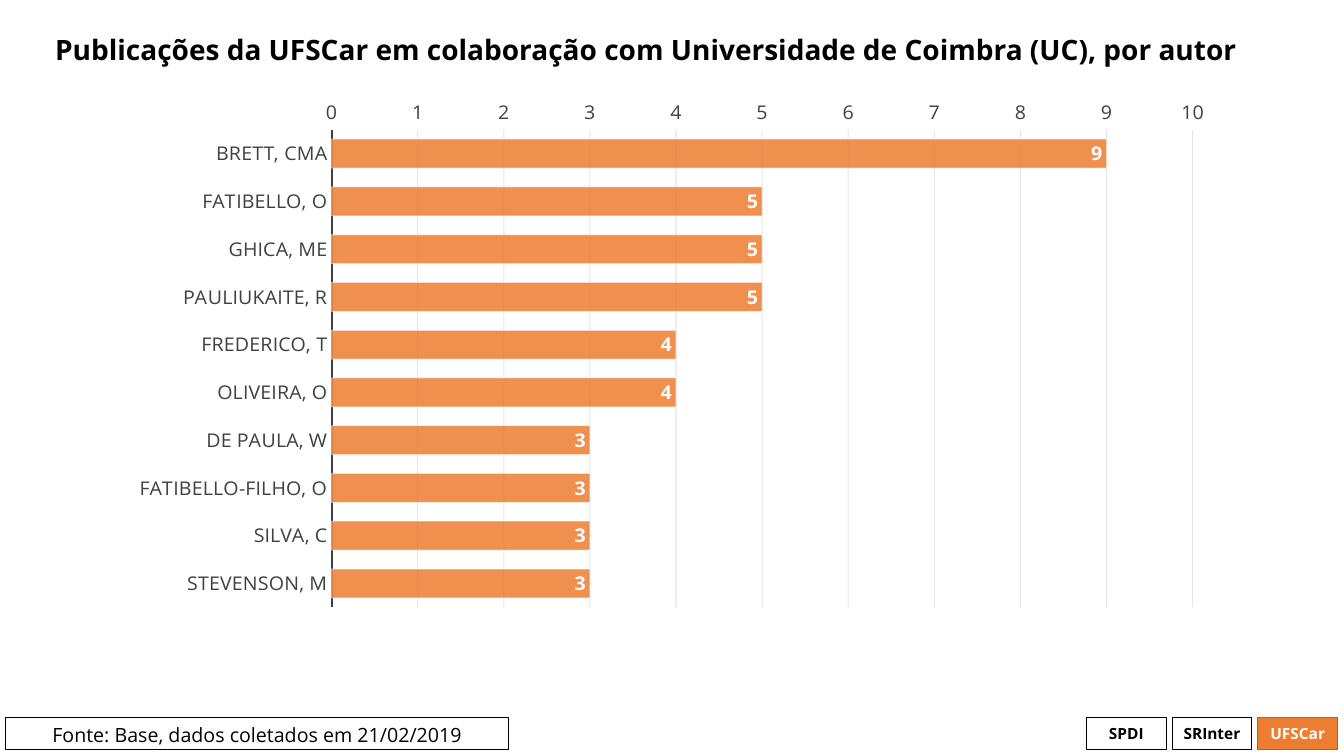
from lxml.etree import SubElement
from pptx import Presentation
from pptx.chart.data import CategoryChartData
from pptx.dml.color import RGBColor
from pptx.enum.chart import XL_AXIS_CROSSES, XL_CHART_TYPE, XL_LABEL_POSITION, XL_TICK_MARK
from pptx.enum.shapes import MSO_SHAPE
from pptx.enum.text import MSO_ANCHOR, PP_ALIGN
from pptx.oxml import parse_xml
from pptx.oxml.ns import nsdecls, qn
from pptx.util import Cm, Pt

TITLE = "Publicações da UFSCar em colaboração com Universidade de Coimbra (UC), por autor"
SOURCE = "Fonte: Base, dados coletados em 21/02/2019"
AUTHORS = [
    ("BRETT, CMA", 9),
    ("FATIBELLO, O", 5),
    ("GHICA, ME", 5),
    ("PAULIUKAITE, R", 5),
    ("FREDERICO, T", 4),
    ("OLIVEIRA, O", 4),
    ("DE PAULA, W", 3),
    ("FATIBELLO-FILHO, O", 3),
    ("SILVA, C", 3),
    ("STEVENSON, M", 3),
]
UNITS = [
    ("SPDI", None, "black", "black"),
    ("SRInter", None, "black", "black"),
    ("UFSCar", "orange", "rust", "white"),
]
THEME = {
    "font": "Open Sans",
    "black": "000000",
    "white": "FFFFFF",
    "gray": "404040",
    "grid": "0D0D0D",
    "orange": "ED7D31",
    "rust": "C55A11",
    "title": 20,
    "body": 14,
    "unit": 11,
}
PLOT_AREA = {"x": 0.194, "y": 0.022, "w": 0.776, "h": 0.89}
FOOT_TOP, FOOT_H = 18.08, 0.81
UNIT_LEFT, UNIT_W, UNIT_STEP = 27.38, 2.01, 2.16


def color(name):
    return RGBColor.from_string(THEME[name])


def apply(obj, values):
    for name, value in values.items():
        setattr(obj, name, value)


def style_font(font, size, ink, bold=False):
    apply(font, {"name": THEME["font"], "size": Pt(THEME[size]), "bold": bold})
    font.color.rgb = color(ink)


def style_line(line, ink, width=0.75):
    line.color.rgb = color(ink)
    line.width = Pt(width)


def write(sp, text, size, ink, bold, anchor, align):
    tf = sp.text_frame
    apply(tf, {"word_wrap": True, "vertical_anchor": anchor})
    p = tf.paragraphs[0]
    p.alignment = align
    r = p.add_run()
    r.text = text
    style_font(r.font, size, ink, bold)
    return p


def add_box(s, left, width, text, size, fill, border, ink, bold, anchor):
    sp = s.shapes.add_shape(MSO_SHAPE.RECTANGLE, Cm(left), Cm(FOOT_TOP), Cm(width), Cm(FOOT_H))
    sp.shadow.inherit = False
    if fill:
        sp.fill.solid()
        sp.fill.fore_color.rgb = color(fill)
    else:
        sp.fill.background()
    style_line(sp.line, border)
    write(sp, text, size, ink, bold, anchor, PP_ALIGN.CENTER)


def set_alpha(chart, path, percent):
    for clr in chart.element.xpath(path):
        SubElement(clr, qn("a:alpha")).set("val", str(percent * 1000))


def place_plot(chart):
    parts = "".join(f'<c:{k}Mode val="edge"/>' for k in "xy")
    parts += "".join(f'<c:{k} val="{v}"/>' for k, v in PLOT_AREA.items())
    layout = parse_xml(
        f'<c:layout {nsdecls("c")}><c:manualLayout><c:layoutTarget val="inner"/>'
        f"{parts}</c:manualLayout></c:layout>"
    )
    plot_area = chart.element.xpath("c:chart/c:plotArea")[0]
    for old in plot_area.xpath("c:layout"):
        plot_area.remove(old)
    plot_area.insert(0, layout)


def fill_chart_area(chart):
    paint = f'<a:solidFill><a:srgbClr val="{THEME["white"]}"/></a:solidFill>'
    area = parse_xml(f'<c:spPr {nsdecls("c", "a")}>{paint}<a:ln w="{Pt(0.75)}">{paint}</a:ln></c:spPr>')
    chart.element.xpath("c:chart")[0].addnext(area)


def add_author_chart(s):
    data = CategoryChartData()
    data.categories = [name for name, _ in AUTHORS]
    data.add_series("Series 1", [count for _, count in AUTHORS])
    chart = s.shapes.add_chart(
        XL_CHART_TYPE.BAR_CLUSTERED, Cm(2.92), Cm(2.51), Cm(27.99), Cm(14), data
    ).chart
    apply(chart, {"has_legend": False, "has_title": False})
    style_font(chart.font, "body", "black")

    cat, val = chart.category_axis, chart.value_axis
    for axis in (cat, val):
        apply(axis, {"major_tick_mark": XL_TICK_MARK.NONE, "minor_tick_mark": XL_TICK_MARK.NONE})
        style_font(axis.tick_labels.font, "body", "gray")
    apply(cat, {"reverse_order": True, "crosses": XL_AXIS_CROSSES.MAXIMUM})
    style_line(cat.format.line, "gray", 1.5)
    apply(val, {"minimum_scale": 0, "maximum_scale": 10, "major_unit": 1, "has_major_gridlines": True})
    val.format.line.fill.background()
    style_line(val.major_gridlines.format.line, "grid")

    plot = chart.plots[0]
    apply(plot, {"gap_width": 65, "vary_by_categories": False})
    bars = plot.series[0]
    bars.format.fill.solid()
    bars.format.fill.fore_color.rgb = color("orange")
    style_line(bars.format.line, "white")
    labels = bars.data_labels
    apply(labels, {"show_value": True, "position": XL_LABEL_POSITION.INSIDE_END})
    style_font(labels.font, "body", "white", True)

    set_alpha(chart, ".//c:ser/c:spPr/a:solidFill/a:srgbClr", 85)
    set_alpha(chart, ".//c:ser/c:spPr/a:ln/a:solidFill/a:srgbClr", 50)
    set_alpha(chart, ".//c:majorGridlines//a:srgbClr", 10)
    place_plot(chart)
    fill_chart_area(chart)


def main():
    prs = Presentation()
    apply(prs, {"slide_width": Cm(33.87), "slide_height": Cm(19.05)})
    s = prs.slides.add_slide(prs.slide_layouts[6])

    for i, (text, fill, border, ink) in enumerate(UNITS):
        left = UNIT_LEFT + i * UNIT_STEP
        add_box(s, left, UNIT_W, text, "unit", fill, border, ink, True, MSO_ANCHOR.MIDDLE)
    add_box(s, 0.15, 12.67, SOURCE, "body", None, "black", "black", False, MSO_ANCHOR.TOP)

    title = s.shapes.add_textbox(Cm(1.14), Cm(0.15), Cm(31.52), Cm(2.31))
    p = write(title, TITLE, "title", "black", True, MSO_ANCHOR.MIDDLE, PP_ALIGN.LEFT)
    p.line_spacing = 0.9

    add_author_chart(s)
    prs.save("out.pptx")


if __name__ == "__main__":
    main()
